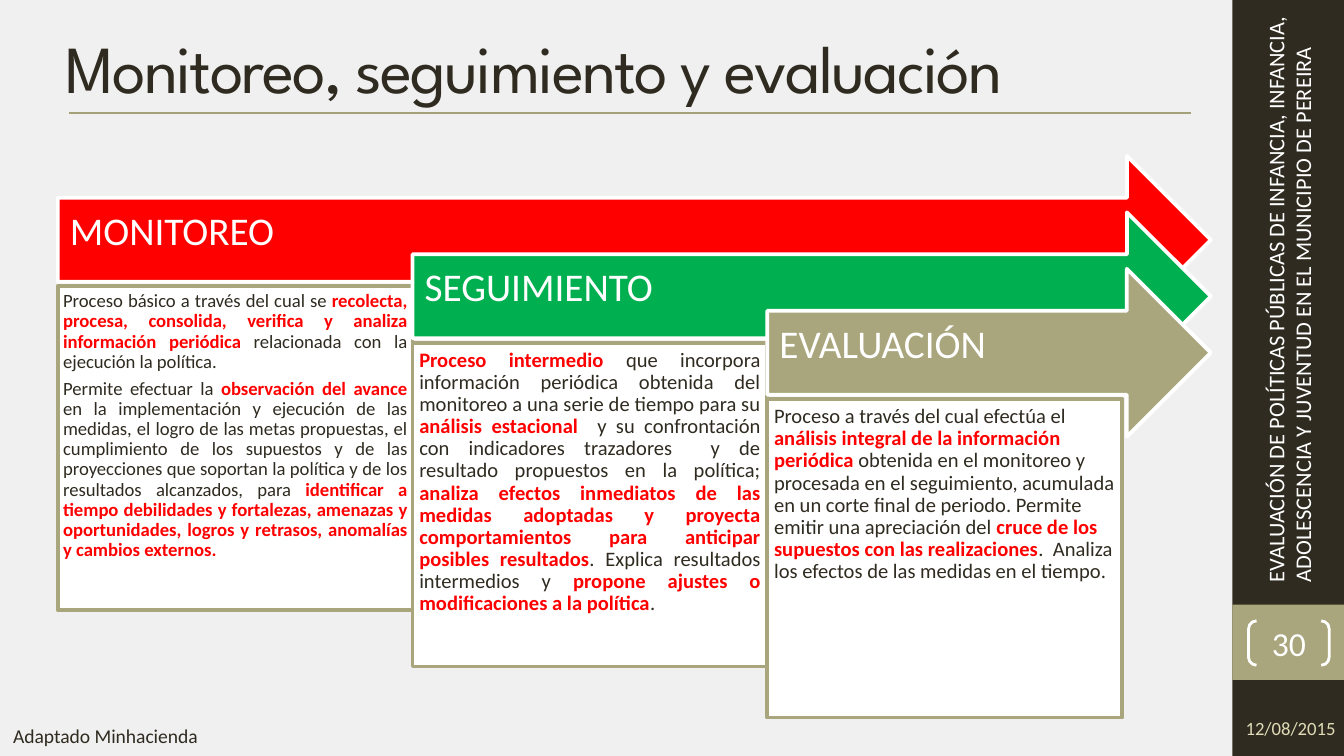
from pptx import Presentation
from pptx.dml.color import RGBColor
from pptx.enum.shapes import MSO_CONNECTOR as Connector, MSO_SHAPE as Shape
from pptx.enum.text import MSO_ANCHOR as Anchor, MSO_AUTO_SIZE as AutoSize, PP_ALIGN as Align
from pptx.oxml.ns import qn
from pptx.util import Inches, Pt
from lxml.etree import SubElement

DARK, TAN, WHITE, RED = "2F2B20", "A9A57C", "FFFFFF", "FF0000"

TITLE = "Monitoreo, seguimiento y evaluación"
PROGRAM = ("EVALUACIÓN DE POLÍTICAS PÚBLICAS DE INFANCIA, INFANCIA, "
           "ADOLESCENCIA Y JUVENTUD EN EL MUNICIPIO DE PEREIRA")
STAGES = [
    dict(name="MONITOREO", color=RED, height=2.41, size=10, align=Align.JUSTIFY, inset=0.04, text=[
        "Proceso básico a través del cual se *recolecta, procesa, consolida, verifica y analiza "
        "información periódica *relacionada con la ejecución la política. ",
        "Permite efectuar la *observación del avance *en la implementación y ejecución de las "
        "medidas, el logro de las metas propuestas, el cumplimiento de los supuestos y de las "
        "proyecciones que soportan la política y de los resultados alcanzados, para *identificar a "
        "tiempo debilidades y fortalezas, amenazas y oportunidades, logros y retrasos, anomalías "
        "y cambios externos.*"]),
    dict(name="SEGUIMIENTO", color="00B050", height=2.41, size=11, align=Align.JUSTIFY, inset=0.05, text=[
        "*Proceso intermedio* que incorpora información periódica obtenida del monitoreo a una "
        "serie de tiempo para su *análisis estacional  *y su confrontación con indicadores "
        "trazadores  y de resultado propuestos en la política; *analiza efectos inmediatos de las "
        "medidas adoptadas y proyecta comportamientos para anticipar posibles resultados*. Explica "
        "resultados intermedios y *propone ajustes o modificaciones a la política*. "]),
    dict(name="EVALUACIÓN", color=TAN, height=2.37, size=11, align=Align.LEFT, inset=0.05, text=[
        "Proceso a través del cual efectúa el *análisis integral de la información periódica* "
        "obtenida en el monitoreo y procesada en el seguimiento, acumulada en un corte final de "
        "periodo. Permite emitir una apreciación del *cruce de los supuestos con las "
        "realizaciones*.  Analiza los efectos de las medidas en el tiempo."]),
]
LEFT, TOP, RIGHT = 0.43, 1.16, 9.01
COLUMN, STEP, ARROW_HEIGHT, BODY_DROP = 2.64, 0.42, 1.25, 0.97


def rgb(value):
    return RGBColor.from_string(value)


def write(box, *texts, size, color=DARK, font="Calibri", align=Align.LEFT, anchor=Anchor.TOP,
          insets=(0.1, 0.05, 0.1, 0.05), spacing=None, after=0):
    frame = box.text_frame
    frame.word_wrap = True
    frame.auto_size = AutoSize.NONE
    frame.vertical_anchor = anchor
    (frame.margin_left, frame.margin_top,
     frame.margin_right, frame.margin_bottom) = map(Inches, insets)
    for number, text in enumerate(texts):
        para = frame.add_paragraph() if number else frame.paragraphs[0]
        para.alignment = align
        para.line_spacing = spacing
        para.space_after = Pt(after)
        for index, part in enumerate(text.split("*")):
            if part:
                span = para.add_run()
                span.text = part
                span.font.name = font
                span.font.size = Pt(size)
                span.font.bold = index % 2 == 1
                span.font.color.rgb = rgb(RED if index % 2 else color)


def add_box(kind, *place, fill=None, line=None, width=2):
    box = page.shapes.add_shape(kind, *map(Inches, place))
    box.shadow.inherit = False
    if fill:
        box.fill.solid()
        box.fill.fore_color.rgb = rgb(fill)
    else:
        box.fill.background()
    if line:
        box.line.color.rgb = rgb(line)
        box.line.width = Pt(width)
    else:
        box.line.fill.background()
    return box


def add_text(*place):
    return page.shapes.add_textbox(*map(Inches, place))


deck = Presentation()
deck.slide_width = Inches(10)
deck.slide_height = deck.slide_width * 9 // 16
page = deck.slides.add_slide(deck.slide_layouts[5])
page.background.fill.solid()
page.background.fill.fore_color.rgb = rgb("F0F0F0")

sidebar = add_box(Shape.RECTANGLE, 9.17, 0, 0.83, 5.62, fill=DARK)
sidebar.height = deck.slide_height
add_box(Shape.RECTANGLE, 9.17, 4.5, 0.83, 0.56, fill=TAN)
program = add_text(7.09, 1.68, 5, 0.5)
program.rotation = 270
write(program, PROGRAM, size=12, color=WHITE)

rule = page.shapes.add_connector(Connector.STRAIGHT, *map(Inches, (0.51, 0.84, 8.86, 0.84)))
rule.line.color.rgb = rgb("A6A278")
rule.line.width = Pt(1)
SubElement(rule._element.spPr, qn("a:effectLst"))

title = page.shapes.title
title.left, title.top, title.width, title.height = map(Inches, (0.39, 0.14, 8.58, 0.71))
write(title, TITLE, size=36, font="League Spartan", anchor=Anchor.MIDDLE)
title.text_frame.paragraphs[0].runs[0].font._element.set("spc", "-100")

for index, stage in enumerate(STAGES):
    left, top = LEFT + index * COLUMN, TOP + index * STEP
    arrow = add_box(Shape.RIGHT_ARROW, left, top, RIGHT - left, ARROW_HEIGHT,
                    fill=stage["color"], line=WHITE)
    write(arrow, stage["name"], size=21, color=WHITE, anchor=Anchor.MIDDLE,
          insets=(0.09, 0.09, 0.28, 0.2), spacing=0.9)
    body = add_box(Shape.RECTANGLE, left, top + BODY_DROP, COLUMN, stage["height"],
                   fill=WHITE, line=TAN)
    write(body, *stage["text"], size=stage["size"], align=stage["align"],
          insets=[stage["inset"]] * 4, spacing=0.9, after=3.5)

write(add_text(9.17, 5.22, 0.83, 0.4), "12/08/2015", size=10, color="DFDCB7",
      anchor=Anchor.MIDDLE, insets=(0.1, 0.05, 0, 0.05))
number = add_box(Shape.DOUBLE_BRACKET, 9.29, 4.62, 0.6, 0.33, line=WHITE, width=1.5)
number.adjustments[0] = 0.18
write(number, "30", size=18, color=WHITE, align=Align.CENTER, anchor=Anchor.MIDDLE, insets=[0] * 4)
write(add_text(0, 5.34, 1.66, 0.28), "Adaptado Minhacienda", size=10.5)

deck.save("out.pptx")
